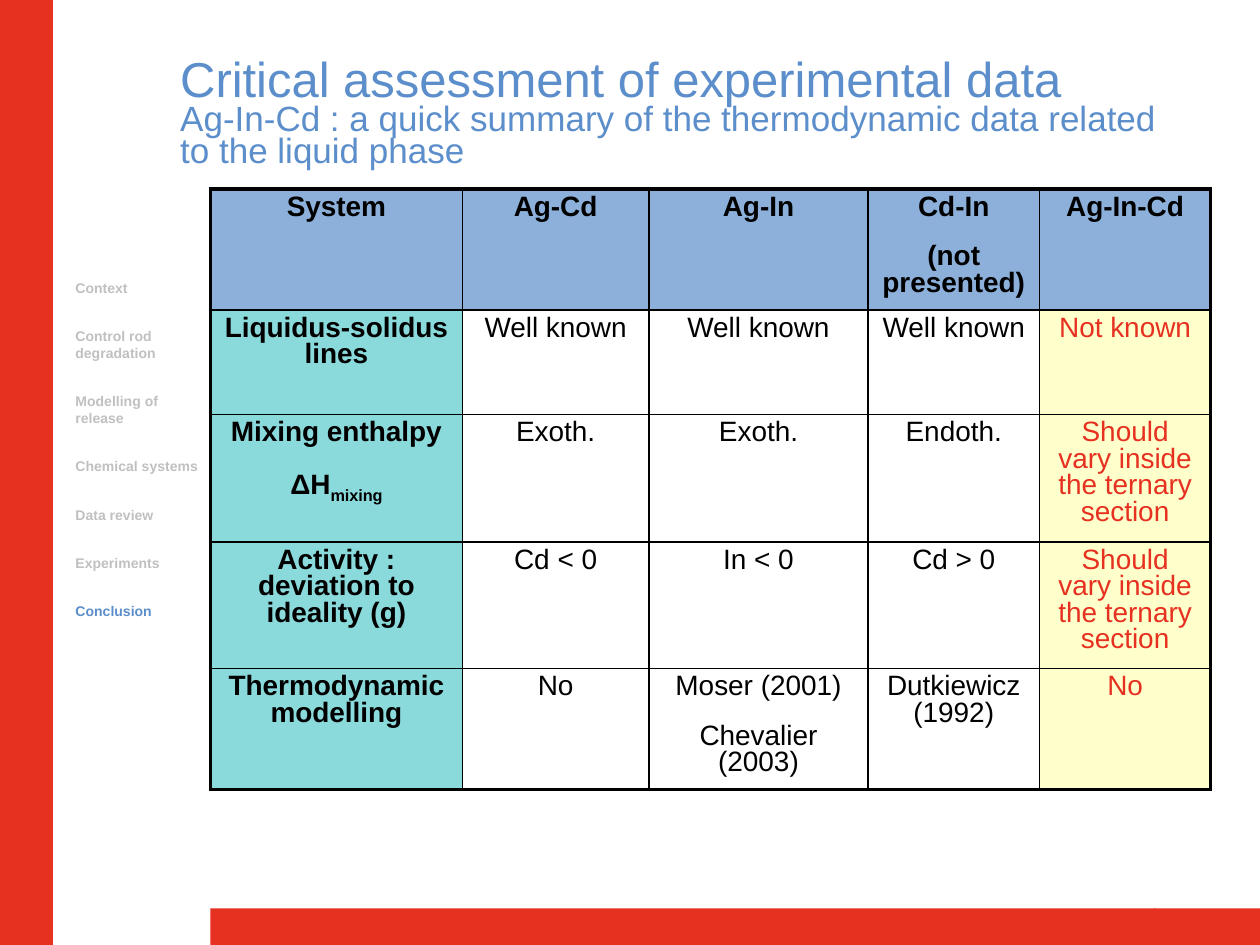
from lxml.etree import SubElement
from pptx import Presentation
from pptx.dml.color import RGBColor
from pptx.enum.shapes import MSO_SHAPE
from pptx.enum.text import MSO_ANCHOR, MSO_AUTO_SIZE, PP_ALIGN
from pptx.oxml.ns import qn
from pptx.util import Inches, Pt

RED = RGBColor(0xE6, 0x30, 0x20)
BLUE = RGBColor(0x5B, 0x8E, 0xCA)
GREY = RGBColor(0xC0, 0xC0, 0xC0)
BLACK = RGBColor(0, 0, 0)
HEAD_FILL = RGBColor(0x8C, 0xB0, 0xDA)
LABEL_FILL = RGBColor(0x8A, 0xDA, 0xDC)
TERNARY_FILL = RGBColor(0xFF, 0xFF, 0xCC)

SECTIONS = ["Context", "Control rod degradation", "Modelling of release",
            "Chemical systems", "Data review", "Experiments", "Conclusion"]
VARY = "Should vary inside the ternary section"
ROWS = [
    ["System", "Ag-Cd", "Ag-In", "Cd-In\n(not presented)", "Ag-In-Cd"],
    ["Liquidus-solidus lines", "Well known", "Well known", "Well known", "Not known"],
    ["Mixing enthalpy\nΔH", "Exoth.", "Exoth.", "Endoth.", VARY],
    ["Activity : deviation to ideality (g)", "Cd < 0", "In < 0", "Cd > 0", VARY],
    ["Thermodynamic modelling", "No", "Moser (2001)\nChevalier (2003)",
     "Dutkiewicz (1992)", "No"],
]
COL_WIDTHS = [2, 1.48, 1.74, 1.36, 1.36]
ROW_HEIGHTS = [0.95, 0.83, 1.01, 1, 0.96]


def style(font, size, color, bold=False):
    font.name, font.size, font.bold = "Arial", Pt(size), bold
    font.color.rgb = color


def add_borders(cell, widths):
    """Draw black cell edges; widths maps L, R, T, B to points."""
    tcPr = cell._tc.get_or_add_tcPr()
    for i, (side, width) in enumerate(widths.items()):
        ln = SubElement(tcPr, qn(f"a:ln{side}"), w=str(Pt(width)))
        SubElement(SubElement(ln, qn("a:solidFill")), qn("a:srgbClr"), val=str(BLACK))
        tcPr.insert(i, ln)


prs = Presentation()
prs.slide_width, prs.slide_height = Inches(10), Inches(7.5)
s = prs.slides.add_slide(prs.slide_layouts[5])

# Red bands: bottom in two parts, then left
for x, y, w, h in [(1.67, 7.21, 7.5, 0.29), (9.16, 7.21, 0.84, 0.29), (0, 0, 0.42, 7.5)]:
    sp = s.shapes.add_shape(MSO_SHAPE.RECTANGLE, Inches(x), Inches(y), Inches(w), Inches(h))
    sp.shadow.inherit = False
    sp.fill.solid()
    sp.fill.fore_color.rgb = RED
    sp.line.fill.background()

# Section list, current section in blue
tf = s.shapes.add_textbox(Inches(0.5), Inches(2.17), Inches(1.25), Inches(2.92)).text_frame
tf.word_wrap = True
tf.text = "\n".join(SECTIONS)
for i, p in enumerate(tf.paragraphs):
    if i:
        p.space_before = Pt(18)
    style(p.runs[0].font, 8, BLUE if p.text == "Conclusion" else GREY, True)

# Title
title = s.shapes.title
title.left, title.top, title.width, title.height = (
    Inches(1.33), Inches(0.67), Inches(8.08), Inches(0.5))
tf = title.text_frame
tf.word_wrap = True
tf.auto_size = MSO_AUTO_SIZE.NONE
tf.vertical_anchor = MSO_ANCHOR.MIDDLE
tf.text = ("Critical assessment of experimental data\n"
           "Ag-In-Cd : a quick summary of the thermodynamic data related to the liquid phase")
for p, size in zip(tf.paragraphs, (28, 20)):
    p.alignment = PP_ALIGN.LEFT
    p.line_spacing = 0.75
    p.space_before = Pt(0)
    style(p.runs[0].font, size, BLUE)

# Summary table
last_row, last_col = len(ROWS) - 1, len(COL_WIDTHS) - 1
table = s.shapes.add_table(len(ROWS), len(COL_WIDTHS), Inches(1.67), Inches(1.5),
                           Inches(sum(COL_WIDTHS)), Inches(sum(ROW_HEIGHTS))).table
table.horz_banding = False
for col, width in zip(table.columns, COL_WIDTHS):
    col.width = Inches(width)
for row, height in zip(table.rows, ROW_HEIGHTS):
    row.height = Inches(height)

for r, texts in enumerate(ROWS):
    for c, text in enumerate(texts):
        cell = table.cell(r, c)
        header = r == 0 or c == 0
        fill = (HEAD_FILL if r == 0 else LABEL_FILL if c == 0
                else TERNARY_FILL if c == last_col else None)
        if fill is None:
            cell.fill.background()
        else:
            cell.fill.solid()
            cell.fill.fore_color.rgb = fill
        add_borders(cell, {"L": 2.25 if c == 0 else 1, "R": 2.25 if c == last_col else 1,
                           "T": 2.25 if r == 0 else 1, "B": 2.25 if r == last_row else 1})
        tf = cell.text_frame
        tf.text = text
        if text.endswith("ΔH"):
            sub = tf.paragraphs[-1].add_run()
            sub.text = "mixing"
            sub.font._element.set("baseline", "-25000")
        for i, p in enumerate(tf.paragraphs):
            p.alignment = PP_ALIGN.CENTER
            p.line_spacing = 0.85
            if i:
                p.space_before = Pt(13)
            for run in p.runs:
                style(run.font, 16, RED if c == last_col and not header else BLACK, header)

prs.save("out.pptx")
